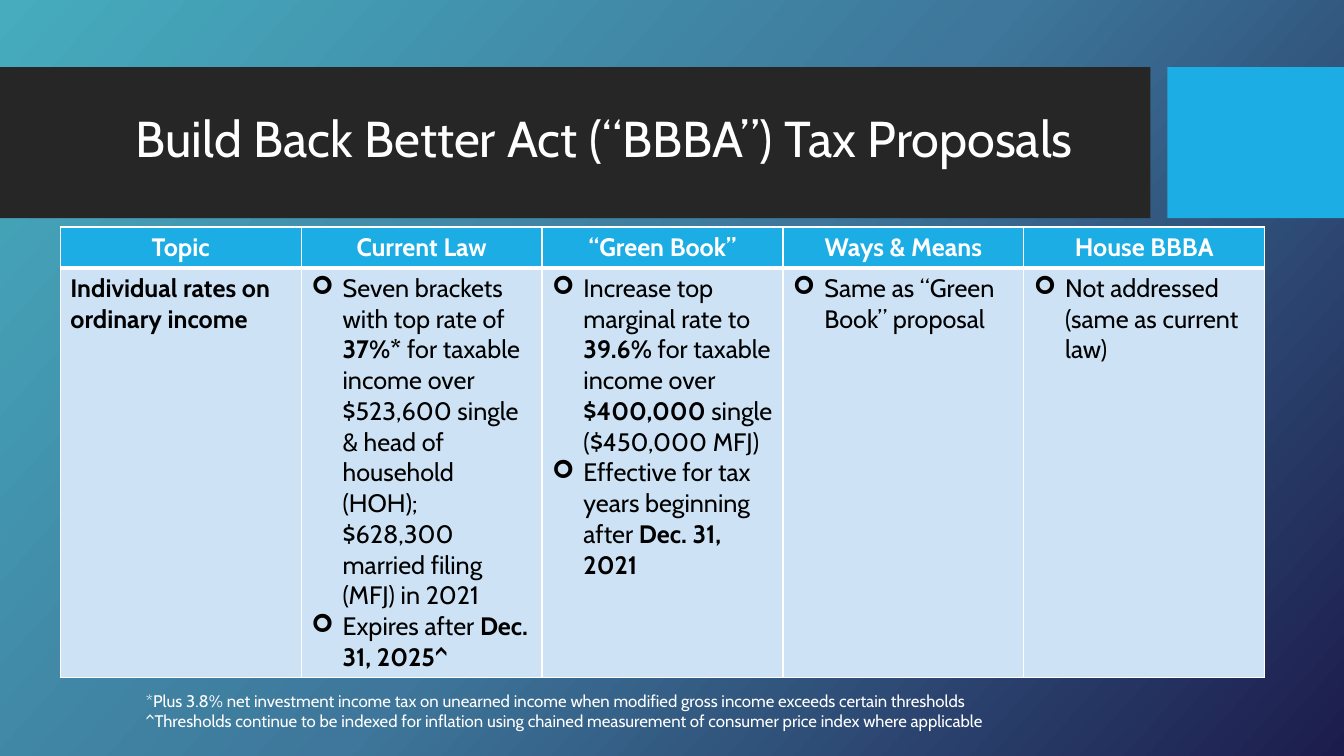
from copy import deepcopy

from lxml.etree import SubElement
from pptx import Presentation
from pptx.dml.color import RGBColor as Rgb
from pptx.enum.shapes import MSO_SHAPE as Shape
from pptx.enum.text import MSO_ANCHOR as Anchor, MSO_AUTO_SIZE as Fit, PP_ALIGN as Align
from pptx.oxml.ns import qn
from pptx.util import Cm, Pt

FONT = "Cabin"
HEX = {"dark": "262626", "blue": "1CADE4", "pale": "CDE3F5", "white": "FFFFFF",
       "black": "000000", "teal": "46ACBE", "steel": "3E779B", "navy": "1C1C4C"}

HEADS = ["Topic", "Current Law", "“Green Book”", "Ways & Means", "House BBBA"]
TOPIC = "|Individual rates on ordinary income|"
PLANS = [
    ["Seven brackets with top rate of |37%*| for taxable income over $523,600 single "
     "& head of household (HOH); $628,300 married filing (MFJ) in 2021",
     "Expires after |Dec. 31, 2025^|"],
    ["Increase top marginal rate to |39.6%| for taxable income over |$400,000| single "
     "($450,000 MFJ)",
     "Effective for tax years beginning after |Dec. 31, 2021|"],
    ["Same as “Green Book” proposal"],
    ["Not addressed (same as current law)"],
]
NOTES = [
    "*Plus 3.8% net investment income tax on unearned income when modified gross income "
    "exceeds certain thresholds",
    "^Thresholds continue to be indexed for inflation using chained measurement of "
    "consumer price index where applicable",
]


def color(name):
    return Rgb.from_string(HEX[name])


def paint(item, name):
    item.fill.solid()
    item.fill.fore_color.rgb = color(name)


def write(frame, lines, size=18, tint="white", align=Align.LEFT, bullet=None, space=1.0):
    """Fill a text frame; words between bars are bold."""
    for i, line in enumerate(lines):
        para = frame.paragraphs[0] if i == 0 else frame.add_paragraph()
        para.alignment, para.line_spacing = align, space
        if bullet:
            props = para._p.get_or_add_pPr()
            props.set("marL", str(Cm(0.79)))
            props.set("indent", str(-Cm(0.79)))
            SubElement(props, qn("a:buFont"), typeface="Wingdings")
            SubElement(props, qn("a:buChar"), char=bullet)
        for j, part in enumerate(line.split("|")):
            if part:
                run = para.add_run()
                run.text = part
                font = run.font
                font.name, font.size, font.bold = FONT, Pt(size), j % 2 == 1
                font.color.rgb = color(tint)


def edge(cell, top=1, bottom=1):
    """Draw white borders, with widths in points."""
    props = cell._tc.get_or_add_tcPr()
    for side, width in zip("LRTB", (1, 1, top, bottom)):
        line = SubElement(props, qn(f"a:ln{side}"), w=str(Pt(width)))
        fill = SubElement(line, qn("a:solidFill"))
        SubElement(fill, qn("a:srgbClr"), val=HEX["white"])


def backdrop(slide):
    fill = slide.background.fill
    fill.gradient()
    fill.gradient_angle = 318
    first = fill.gradient_stops[0]._gs
    first.addnext(deepcopy(first))
    for stop, name, spot in zip(fill.gradient_stops, ("teal", "steel", "navy"), (0, 0.5, 1)):
        stop.color.rgb = color(name)
        stop.position = spot


def banner(slide, x, y, w, h):
    block, gap = Cm(4.45), Cm(0.43)
    bar = w - block - gap
    for left, wide, name in ((x, bar, "dark"), (x + w - block, block, "blue")):
        rect = slide.shapes.add_shape(Shape.RECTANGLE, left, y, wide, h)
        rect.shadow.inherit = False
        rect.line.fill.background()
        paint(rect, name)
    title = slide.shapes.title
    slide.shapes._spTree.append(title._element)
    title.left, title.top = x + Cm(1.88), y + Cm(0.38)
    title.width, title.height = Cm(26.7), Cm(3)
    frame = title.text_frame
    frame.word_wrap, frame.auto_size = True, Fit.NONE
    frame.vertical_anchor = Anchor.MIDDLE
    write(frame, ["Build Back Better Act (“BBBA”) Tax Proposals"], size=36,
          align=Align.CENTER, space=0.9)


def grid(slide, x, y, w, h):
    table = slide.shapes.add_table(2, len(HEADS), x, y, w, h).table
    table.horz_banding = False
    head = Cm(0.89)
    table.rows[0].height, table.rows[1].height = head, h - head
    for i, label in enumerate(HEADS):
        table.columns[i].width = w // len(HEADS)
        top, body = table.cell(0, i), table.cell(1, i)
        edge(top, bottom=3)
        edge(body, top=3)
        paint(top, "blue")
        paint(body, "pale")
        write(top.text_frame, [f"|{label}|"], align=Align.CENTER)
        if i == 0:
            write(body.text_frame, [TOPIC], tint="black")
        else:
            write(body.text_frame, PLANS[i - 1], tint="black", bullet="➢")


def notes(slide, x, y, w, h):
    frame = slide.shapes.add_textbox(x, y, w, h).text_frame
    frame.word_wrap, frame.auto_size = True, Fit.SHAPE_TO_FIT_TEXT
    write(frame, NOTES, size=12)


def main():
    deck = Presentation()
    deck.slide_width, deck.slide_height = Cm(33.87), Cm(19.05)
    slide = deck.slides.add_slide(deck.slide_layouts[5])
    backdrop(slide)
    banner(slide, 0, Cm(1.69), deck.slide_width, Cm(3.81))
    grid(slide, Cm(1.52), Cm(5.72), Cm(30.35), Cm(10.7))
    notes(slide, Cm(3.43), Cm(17.27), Cm(23.34), Cm(1.27))
    deck.save("out.pptx")


if __name__ == "__main__":
    main()
